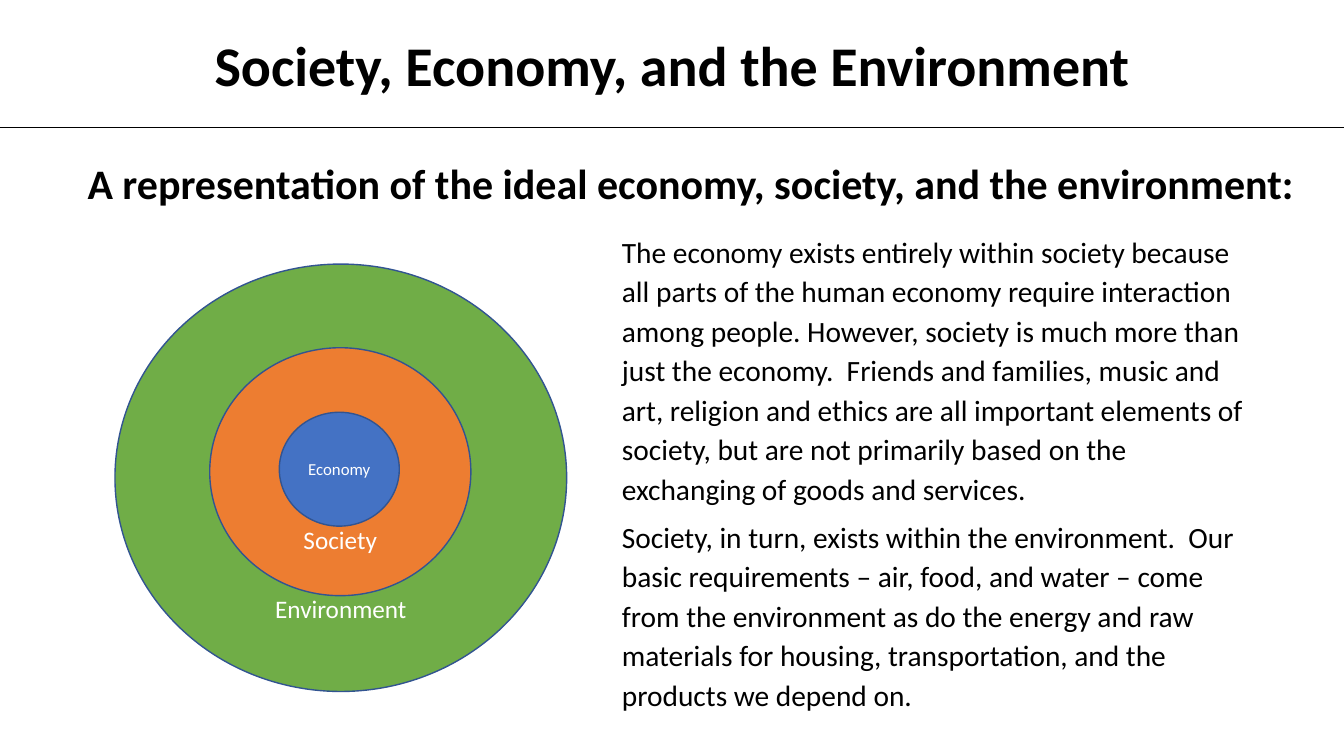
from dataclasses import dataclass

from lxml import etree
from pptx import Presentation
from pptx.dml.color import RGBColor
from pptx.enum import shapes, text
from pptx.oxml import ns
from pptx.util import Inches, Pt


@dataclass(frozen=True)
class Theme:
    font: str = "Calibri"
    ink: str = "000000"
    label: str = "FFFFFF"
    outline: str = "325491"
    environment: str = "70AD47"
    society: str = "ED7D31"
    economy: str = "4472C4"
    title_size: float = 40
    heading_size: float = 30
    body_size: float = 21
    label_size: float = 18
    small_size: float = 12


THEME = Theme()
TITLE = "Society, Economy, and the Environment"
HEADING = "A representation of the ideal economy, society, and the environment:"
BODY = [
    "The economy exists entirely within society because all parts of the human "
    "economy require interaction among people. However, society is much more than "
    "just the economy.  Friends and families, music and art, religion and ethics "
    "are all important elements of society, but are not primarily based on the "
    "exchanging of goods and services.",
    "Society, in turn, exists within the environment.  Our basic requirements – "
    "air, food, and water – come from the environment as do the energy and raw "
    "materials for housing, transportation, and the products we depend on.",
]
# Name, box relative to the diagram, fill, label size, label anchor
RINGS = [
    ("Environment", (0, 0, 4.48, 4.24), THEME.environment, THEME.label_size,
     text.MSO_ANCHOR.BOTTOM),
    ("Society", (0.94, 0.83, 2.59, 2.46), THEME.society, THEME.label_size,
     text.MSO_ANCHOR.BOTTOM),
    ("Economy", (1.63, 1.47, 1.19, 1.13), THEME.economy, THEME.small_size,
     text.MSO_ANCHOR.MIDDLE),
]


def write(sp, paragraphs, *, size, color=THEME.ink, bold=False,
          align=text.PP_ALIGN.LEFT, anchor=text.MSO_ANCHOR.TOP,
          spacing=1.0, before=0, wrap=True):
    tf = sp.text_frame
    tf.word_wrap = wrap
    tf.vertical_anchor = anchor
    for i, content in enumerate(paragraphs):
        p = tf.add_paragraph() if i else tf.paragraphs[0]
        p.alignment = align
        p.line_spacing = spacing
        p.space_before = Pt(before)
        r = p.add_run()
        r.text = content
        r.font.name = THEME.font
        r.font.size = Pt(size)
        r.font.bold = bold
        r.font.color.rgb = RGBColor.from_string(color)


def add_text(s, box, paragraphs, **fmt):
    write(s.shapes.add_textbox(*map(Inches, box)), paragraphs, **fmt)


def add_header(s, box):
    """Centre the title in the band and rule off its lower edge."""
    left, top, width, height = box
    add_text(s, (left + 1.97, top + 0.25, width - 3.94, 0.77), [TITLE],
             size=THEME.title_size, bold=True, align=text.PP_ALIGN.CENTER, before=1)
    y = Inches(top + height)
    rule = s.shapes.add_connector(shapes.MSO_CONNECTOR.STRAIGHT,
                                  Inches(left), y, Inches(left + width), y)
    rule.line.color.rgb = RGBColor.from_string(THEME.ink)
    rule.line.width = Pt(0.5)
    etree.SubElement(rule._element.spPr, ns.qn("a:effectLst"))


def add_nested_rings(s, left, top):
    group = s.shapes.add_group_shape()
    for name, (dx, dy, width, height), fill, size, anchor in RINGS:
        sp = group.shapes.add_shape(
            shapes.MSO_SHAPE.OVAL,
            *map(Inches, (left + dx, top + dy, width, height)))
        sp.shadow.inherit = False
        sp.fill.solid()
        sp.fill.fore_color.rgb = RGBColor.from_string(fill)
        sp.line.color.rgb = RGBColor.from_string(THEME.outline)
        sp.line.width = Pt(1)
        write(sp, [name], size=size, color=THEME.label, anchor=anchor,
              align=text.PP_ALIGN.CENTER, wrap=False)


def build_slide(prs):
    s = prs.slides.add_slide(prs.slide_layouts[6])
    add_text(s, (0.77, 1.46, 12.26, 0.64), [HEADING], size=THEME.heading_size,
             bold=True, anchor=text.MSO_ANCHOR.MIDDLE, spacing=1.14)
    add_text(s, (6.07, 2.23, 6.4, 5), BODY, size=THEME.body_size,
             spacing=1.12, before=6)
    add_nested_rings(s, 1.14, 2.62)
    add_header(s, (0, 0, 13.33, 1.26))


def main():
    prs = Presentation()
    prs.slide_width, prs.slide_height = Inches(13.33), Inches(7.5)
    build_slide(prs)
    prs.save("out.pptx")


if __name__ == "__main__":
    main()
